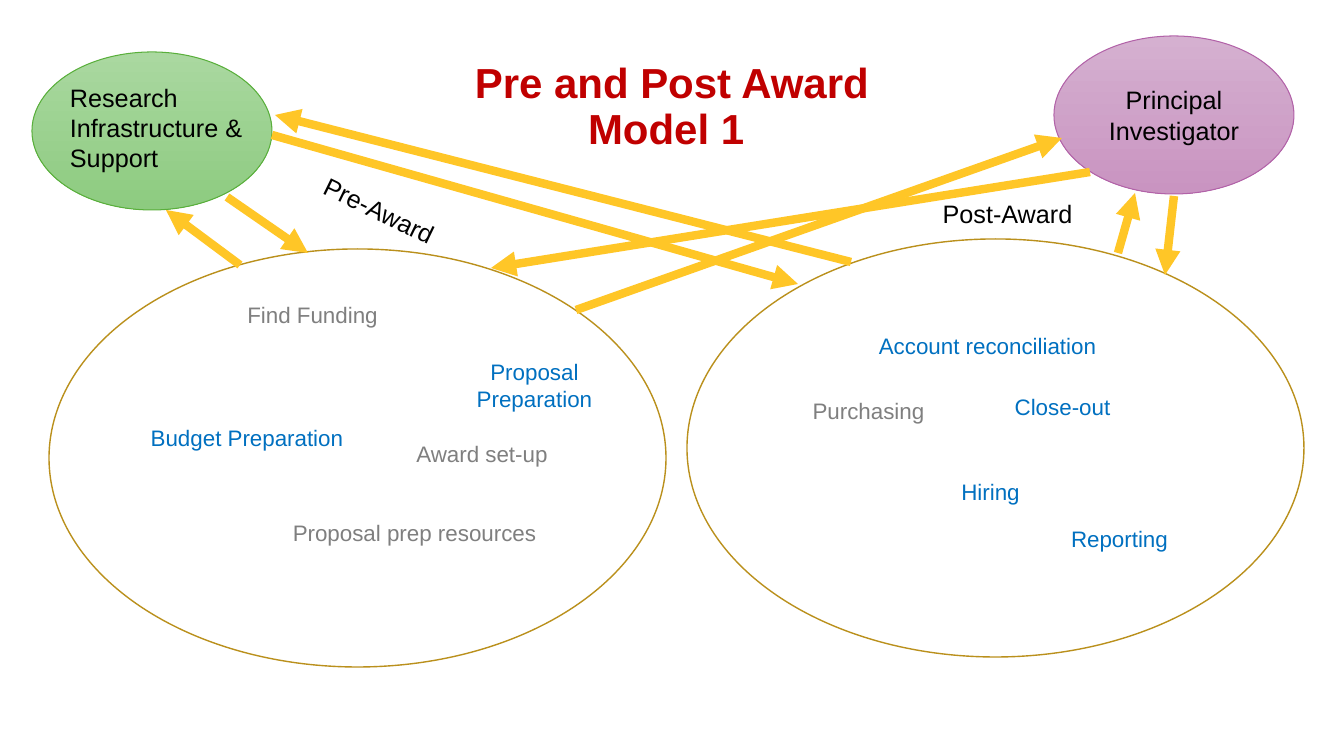
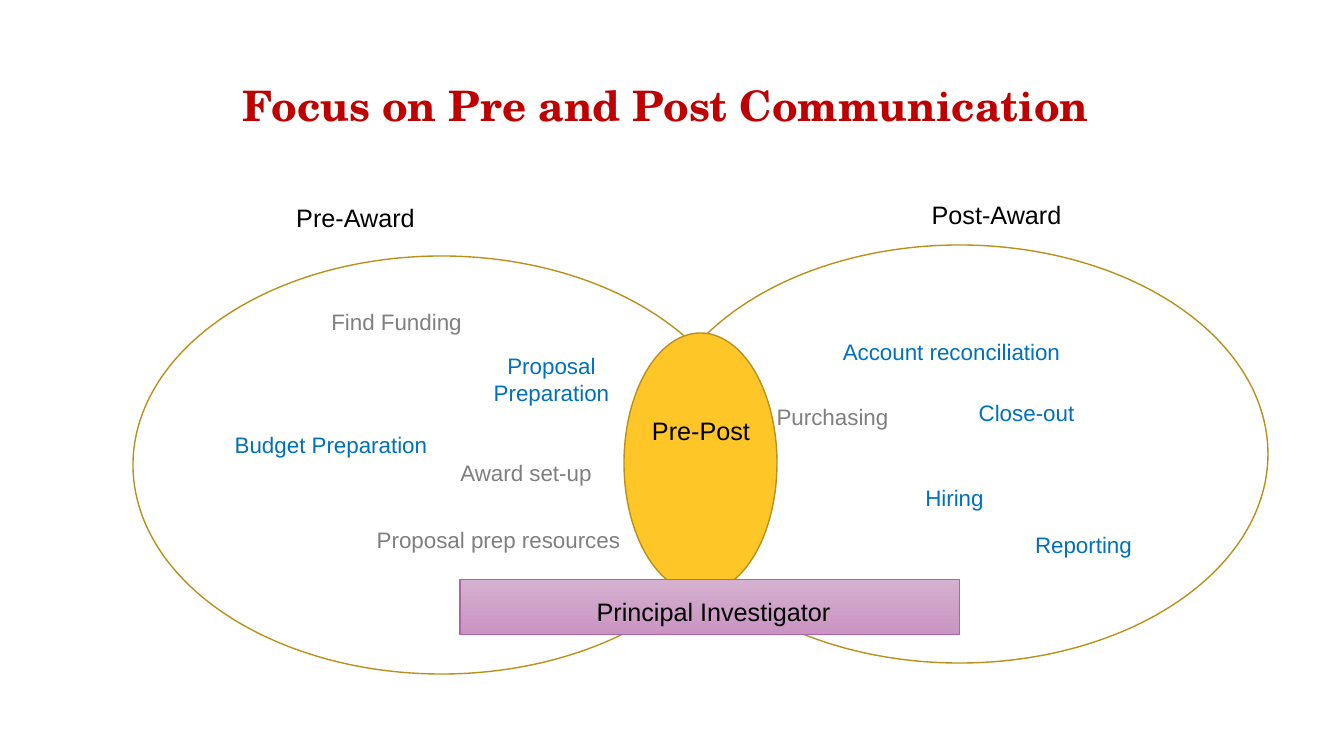
from dataclasses import dataclass
from typing import Any, Optional

from lxml import etree
from pptx import Presentation
from pptx.dml.color import RGBColor
from pptx.enum.shapes import MSO_CONNECTOR, MSO_SHAPE
from pptx.enum.text import MSO_ANCHOR, PP_ALIGN
from pptx.oxml.ns import qn
from pptx.slide import Slide
from pptx.util import Emu, Pt

ELLIPSE = MSO_SHAPE.OVAL
RECTANGLE = MSO_SHAPE.RECTANGLE
STRAIGHT = MSO_CONNECTOR.STRAIGHT
CENTER = PP_ALIGN.CENTER
LEFT = PP_ALIGN.LEFT
TOP = MSO_ANCHOR.TOP
MIDDLE = MSO_ANCHOR.MIDDLE

RED = RGBColor(0xC0, 0x00, 0x00)
BLACK = RGBColor(0x00, 0x00, 0x00)
GRAY = RGBColor(0x7F, 0x7F, 0x7F)
BLUE = RGBColor(0x00, 0x70, 0xC0)
GOLD = RGBColor(0xFF, 0xC6, 0x27)
DARK_GOLD = RGBColor(0xBA, 0x90, 0x1C)
GREEN_LINE = RGBColor(0x59, 0xAF, 0x3B)
GREEN_FILL = (RGBColor(0xAA, 0xD8, 0xA0), RGBColor(0x8D, 0xCB, 0x80))
PURPLE_LINE = RGBColor(0xB2, 0x62, 0xA8)
PURPLE_FILL = (RGBColor(0xD5, 0xB0, 0xD0), RGBColor(0xC9, 0x94, 0xC1))

SANS = "Arial"
SERIF = "TeX Gyre Schola"
EMU_PER_PX = 914400 / 100.8
PAGE_WIDTH, PAGE_HEIGHT = 1344, 756
CIRCLE_WIDTH, CIRCLE_HEIGHT = 617, 418
LABEL_WIDTH, LABEL_HEIGHT = 353, 40


def px(length: int) -> Emu:
    return Emu(round(length * EMU_PER_PX))


FRAME_FORMAT = {
    "word_wrap": True,
    "margin_left": px(10),
    "margin_right": px(10),
    "margin_top": px(5),
    "margin_bottom": px(5),
}
TITLE_FRAME = {"vertical_anchor": MIDDLE, "margin_bottom": px(51)}


@dataclass(frozen=True)
class TextStyle:
    size: int
    color: RGBColor
    font: str = SANS
    bold: bool = False
    align: PP_ALIGN = CENTER
    spacing: float = 1.0


@dataclass(frozen=True)
class Label:
    text: str
    left: int
    top: int
    width: int
    height: int
    style: TextStyle
    rotation: float = 0


@dataclass(frozen=True)
class Task:
    text: str
    left: int
    top: int
    width: int
    color: RGBColor
    height: int = 37


@dataclass(frozen=True)
class Figure:
    left: int
    top: int
    width: int
    height: int
    colors: tuple[RGBColor, ...] = ()
    line: RGBColor = DARK_GOLD
    line_width: float = 1
    kind: MSO_SHAPE = ELLIPSE


@dataclass(frozen=True)
class Arrow:
    start: tuple[int, int]
    end: tuple[int, int]


BODY = TextStyle(18, BLACK)
BODY_LEFT = TextStyle(18, BLACK, align=LEFT)

PRE_TASKS = (
    Task("Find Funding", 103, 47, 321, GRAY),
    Task("Budget Preparation", 78, 170, 240, BLUE),
    Task("Proposal prep resources", 232, 265, 267, GRAY),
)
POST_TASKS = (
    Task("Account reconciliation", 122, 88, 357, BLUE),
    Task("Hiring", 183, 234, 241, BLUE),
    Task("Purchasing", 44, 153, 275, GRAY),
    Task("Close-out", 255, 149, 241, BLUE),
    Task("Reporting", 312, 281, 241, BLUE),
)
MODEL_ARROWS = (
    Arrow((227, 197), (308, 253)),
    Arrow((272, 135), (798, 284)),
    Arrow((576, 310), (1062, 138)),
    Arrow((1118, 253), (1135, 193)),
    Arrow((1174, 196), (1165, 275)),
    Arrow((1090, 172), (491, 268)),
    Arrow((851, 262), (275, 115)),
    Arrow((240, 265), (166, 210)),
)


def apply_format(target: Any, values: dict[str, Any]) -> None:
    for name, value in values.items():
        setattr(target, name, value)


def write_text(box: Any, text: str, style: TextStyle, frame: dict[str, Any]) -> None:
    apply_format(box.text_frame, FRAME_FORMAT | frame)
    para = box.text_frame.paragraphs[0]
    para.text = text
    apply_format(para, {"alignment": style.align, "line_spacing": style.spacing})
    for span in para.runs:
        apply_format(
            span.font,
            {"name": style.font, "size": Pt(style.size), "bold": style.bold},
        )
        span.font.color.rgb = style.color


def add_label(page: Slide, label: Label, frame: Optional[dict[str, Any]] = None) -> None:
    box = page.shapes.add_textbox(
        px(label.left), px(label.top), px(label.width), px(label.height)
    )
    box.rotation = label.rotation
    write_text(box, label.text, label.style, frame or {"vertical_anchor": TOP})


def add_title(page: Slide, text: str, font: str) -> None:
    style = TextStyle(30, RED, font, bold=True, spacing=0.9)
    add_label(page, Label(text, 76, 52, 1192, 158, style), TITLE_FRAME)


def add_figure(page: Slide, figure: Figure) -> Any:
    shape = page.shapes.add_shape(
        figure.kind, px(figure.left), px(figure.top), px(figure.width), px(figure.height)
    )
    shape.shadow.inherit = False
    shape.line.color.rgb = figure.line
    shape.line.width = Pt(figure.line_width)
    if not figure.colors:
        shape.fill.background()
    elif len(figure.colors) == 1:
        shape.fill.solid()
        shape.fill.fore_color.rgb = figure.colors[0]
    else:
        shape.fill.gradient()
        shape.fill.gradient_angle = 270
        for position, (stop, color) in enumerate(
            zip(shape.fill.gradient_stops, figure.colors)
        ):
            stop.position = position
            stop.color.rgb = color
    return shape


def add_circle(page: Slide, left: int, top: int, tasks: tuple[Task, ...]) -> None:
    add_figure(page, Figure(left, top, CIRCLE_WIDTH, CIRCLE_HEIGHT))
    for task in tasks:
        add_label(
            page,
            Label(
                task.text,
                left + task.left,
                top + task.top,
                task.width,
                task.height,
                TextStyle(16, task.color),
            ),
        )


def add_heading(page: Slide, text: str, left: int, top: int, rotation: float = 0) -> None:
    add_label(page, Label(text, left, top, LABEL_WIDTH, LABEL_HEIGHT, BODY, rotation))


def add_arrow(page: Slide, arrow: Arrow) -> None:
    connector = page.shapes.add_connector(
        STRAIGHT, *(px(length) for length in arrow.start + arrow.end)
    )
    connector.line.color.rgb = GOLD
    connector.line.width = Pt(6)
    properties = connector.element.spPr
    etree.SubElement(properties.find(qn("a:ln")), qn("a:tailEnd"), type="triangle")
    etree.SubElement(properties, qn("a:effectLst"))


def build_model(page: Slide) -> None:
    add_title(page, "Pre and Post Award\vModel 1 ", SANS)
    proposal = Task("Proposal Preparation", 377, 104, 217, BLUE, 65)
    award = Task("Award set-up", 263, 186, 340, GRAY)
    add_circle(page, 49, 249, PRE_TASKS + (proposal, award))
    add_circle(page, 687, 239, POST_TASKS)
    add_heading(page, "Pre-Award", 203, 190, 25.9)
    add_heading(page, "Post-Award", 831, 193)
    add_figure(page, Figure(32, 52, 240, 158, GREEN_FILL, GREEN_LINE, 0.75))
    investigator = add_figure(
        page, Figure(1054, 36, 240, 158, PURPLE_FILL, PURPLE_LINE, 0.75)
    )
    write_text(investigator, "Principal Investigator", BODY, {"vertical_anchor": MIDDLE})
    add_label(
        page, Label("Research Infrastructure & Support", 60, 77, 237, 102, BODY_LEFT)
    )
    for arrow in MODEL_ARROWS:
        add_arrow(page, arrow)


def build_communication(page: Slide) -> None:
    add_title(page, "Focus on Pre and Post Communication ", SERIF)
    proposal = Task("Proposal Preparation", 310, 91, 217, BLUE, 65)
    award = Task("Award set-up", 223, 198, 340, GRAY)
    add_circle(page, 133, 256, PRE_TASKS + (proposal, award))
    add_circle(page, 651, 245, POST_TASKS)
    add_heading(page, "Pre-Award", 179, 197)
    add_heading(page, "Post-Award", 820, 194)
    add_figure(page, Figure(624, 333, 153, 260, (GOLD,)))
    add_label(page, Label("Pre-Post", 642, 410, 126, LABEL_HEIGHT, BODY_LEFT))
    add_figure(
        page, Figure(460, 580, 500, 55, PURPLE_FILL, PURPLE_LINE, 0.75, RECTANGLE)
    )
    add_heading(page, "Principal Investigator", 537, 591)


def main() -> None:
    deck = Presentation()
    deck.slide_width = px(PAGE_WIDTH)
    deck.slide_height = px(PAGE_HEIGHT)
    blank = deck.slide_layouts[6]
    for build in (build_model, build_communication):
        build(deck.slides.add_slide(blank))
    deck.save("out.pptx")


if __name__ == "__main__":
    main()
